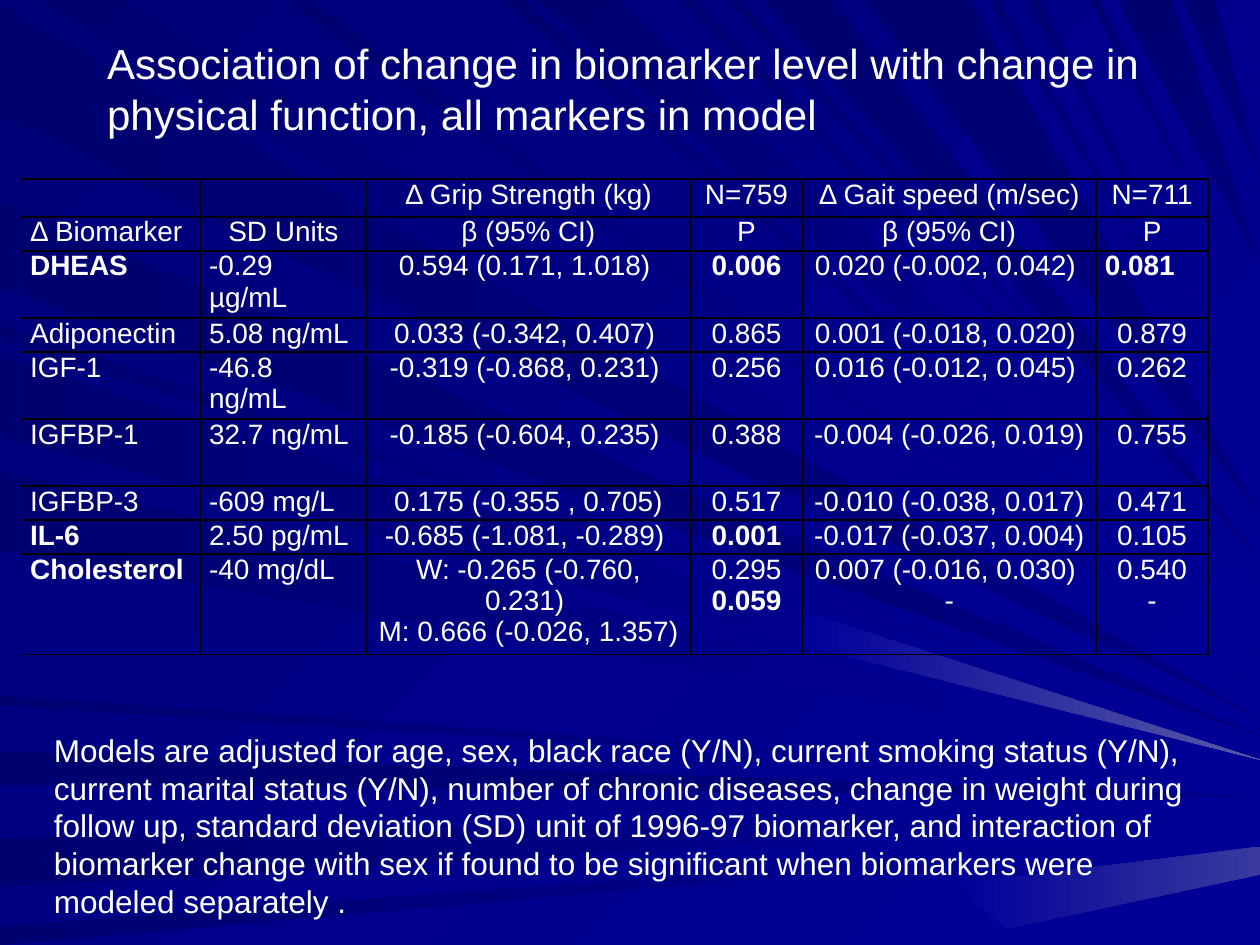
from lxml import etree
from pptx import Presentation
from pptx.dml.color import RGBColor
from pptx.enum import text
from pptx.oxml import ns
from pptx.util import Inches, Pt

WHITE = RGBColor(0xFF, 0xFF, 0xFF)
BLACK = RGBColor(0x00, 0x00, 0x00)
NIGHT = RGBColor(0x00, 0x00, 0x78)
SHADE = RGBColor(0x00, 0x00, 0x70)
BLUE = RGBColor(0x00, 0x00, 0x99)
NAVY = RGBColor(0x00, 0x00, 0x80)
HAZE = RGBColor(0x39, 0x39, 0x9E)
GLOW = RGBColor(0x5A, 0x5A, 0xA6)

# Rays run from a stretch of one edge to a tip on the right edge: from, to, tip height
LEFT_NAVY = [(0.02, 0.93, 5.7), (1.59, 2.28, 5.84), (5.96, 6.23, 6.32)]
LEFT_BLUE = [(2.58, 2.7, 5.89), (3.74, 4.37, 6.06), (2.83, 3.47, 6.03),
             (5.52, 5.6, 6.22), (6.65, 7.04, 6.47), (7.35, 7.5, 6.62)]
TOP_BLUE = [(0.26, 1.01, 5.63), (2.25, 2.47, 5.5), (3.98, 4.16, 5.18),
            (4.26, 4.92, 4.93), (5.4, 5.52, 4.63), (5.77, 5.88, 4.54),
            (7.85, 7.92, 3.57), (8.15, 8.24, 3.36), (8.65, 8.72, 2.54)]
TOP_NAVY = [(6.06, 6.61, 4.46), (6.86, 7.7, 4.1), (8.87, 9.3, 2.1), (9.39, 9.64, 1.4)]
# Lighter patches near the right edge
PATCHES = [(HAZE, [(10, 6.94), (10, 6.72), (7.56, 7.02), (8, 7.37)]),
           (GLOW, [(10, 6.03), (6.37, 4.85), (6.33, 5.11)])]

TITLE = "Association of change in biomarker level with change in physical function, all markers in model"
NOTE = ("Models are adjusted for age, sex, black race (Y/N), current smoking status (Y/N), "
        "current marital status (Y/N), number of chronic diseases, change in weight during "
        "follow up, standard deviation (SD) unit of 1996-97 biomarker, and interaction of "
        "biomarker change with sex if found to be significant when biomarkers were modeled separately .")

# A leading * marks a bold line
ROWS = [
    ["", "", "Δ Grip Strength (kg)", "N=759", "Δ Gait speed (m/sec)", "N=711"],
    ["Δ Biomarker", "SD Units", "β (95% CI)", "P", "β (95% CI)", "P"],
    ["*DHEAS", "-0.29 µg/mL", "0.594 (0.171, 1.018) ", "*0.006", "0.020 (-0.002, 0.042) ", "*0.081"],
    ["Adiponectin", "5.08 ng/mL", "0.033 (-0.342, 0.407) ", "0.865", "0.001 (-0.018, 0.020) ", "0.879"],
    ["IGF-1", "-46.8 ng/mL", "-0.319 (-0.868, 0.231) ", "0.256", "0.016 (-0.012, 0.045) ", "0.262"],
    ["IGFBP-1", "32.7 ng/mL", "-0.185 (-0.604, 0.235) ", "0.388", "-0.004 (-0.026, 0.019)", "0.755"],
    ["IGFBP-3", "-609 mg/L", "0.175 (-0.355 , 0.705)", "0.517", "-0.010 (-0.038, 0.017) ", "0.471"],
    ["*IL-6", "2.50 pg/mL", "-0.685 (-1.081, -0.289) ", "*0.001", "-0.017 (-0.037, 0.004) ", "0.105"],
    ["*Cholesterol", "-40 mg/dL", "W: -0.265 (-0.760, 0.231) \nM: 0.666 (-0.026, 1.357) ",
     "0.295\n*0.059", "0.007 (-0.016, 0.030) \n-", "0.540\n-"],
]
COL_WIDTHS = [1.42, 1.32, 2.57, 0.89, 2.33, 0.89]
ROW_HEIGHTS = [0.27, 0.27, 0.53, 0.27, 0.53, 0.53, 0.27, 0.27, 0.8]
LEFT_CELLS = {(2, 5)}  # set left although its column is centred


def set_all(obj, values):
    for name, value in values.items():
        setattr(obj, name, value)


def write(p, words, size, align, bold=False):
    p.alignment = align
    r = p.add_run()
    r.text = words
    set_all(r.font, {"name": "Arial", "size": Pt(size), "bold": bold})
    r.font.color.rgb = WHITE


def paint(fill, start, end, angle):
    fill.gradient()
    fill.gradient_angle = -angle % 360  # counter-clockwise
    for stop, color in zip(fill.gradient_stops, (start, end)):
        stop.color.rgb = color


def add_ray(group, corners, start, end, angle):
    points = [(Inches(x), Inches(y)) for x, y in corners]
    builder = group.shapes.build_freeform(*points[0])
    builder.add_line_segments(points[1:], close=True)
    sp = builder.convert_to_shape()
    paint(sp.fill, start, end, angle)
    sp.line.fill.background()
    sp.shadow.inherit = False


def add_background(s, width):
    paint(s.background.fill, NIGHT, BLUE, 45)
    group = s.shapes.add_group_shape()
    for rays, end in ((LEFT_NAVY, NAVY), (LEFT_BLUE, BLUE)):
        for first, last, tip in rays:
            add_ray(group, [(0, first), (0, last), (width, tip)], SHADE, end, 0)
    for rays, end, angle in ((TOP_BLUE, BLUE, 45), (TOP_NAVY, NAVY, 90)):
        for first, last, tip in rays:
            add_ray(group, [(first, 0), (last, 0), (width, tip)], SHADE, end, angle)
    for end, corners in PATCHES:
        add_ray(group, corners, BLUE, end, 0)
    # Send the rays behind the title
    s.shapes.element.insert(2, group.element)


def fill_text(sp, box, words, size):
    set_all(sp, dict(zip(("left", "top", "width", "height"), map(Inches, box))))
    tf = sp.text_frame
    set_all(tf, {"word_wrap": True, "vertical_anchor": text.MSO_ANCHOR.TOP,
                 "auto_size": text.MSO_AUTO_SIZE.SHAPE_TO_FIT_TEXT})
    write(tf.paragraphs[0], words, size, text.PP_ALIGN.LEFT)


def add_borders(cell):
    tc_pr = cell._tc.get_or_add_tcPr()
    for i, side in enumerate(("a:lnL", "a:lnR", "a:lnT", "a:lnB")):
        ln = etree.Element(ns.qn(side), w=str(Pt(1)))
        solid = etree.SubElement(ln, ns.qn("a:solidFill"))
        etree.SubElement(solid, ns.qn("a:srgbClr"), val=str(BLACK))
        tc_pr.insert(i, ln)


def add_results(s, box):
    table = s.shapes.add_table(len(ROWS), len(COL_WIDTHS), *map(Inches, box)).table
    set_all(table, {"first_row": False, "horz_banding": False})
    for col, width in zip(table.columns, COL_WIDTHS):
        col.width = Inches(width)
    for row, height in zip(table.rows, ROW_HEIGHTS):
        row.height = Inches(height)
    for i, values in enumerate(ROWS):
        for j, value in enumerate(values):
            cell = table.cell(i, j)
            set_all(cell, {"margin_left": Inches(0.07), "margin_right": Inches(0.07),
                           "margin_top": 0, "margin_bottom": 0})
            cell.fill.background()
            add_borders(cell)
            is_left = j == 0 or (j == 1 and i > 1) or (i, j) in LEFT_CELLS
            align = text.PP_ALIGN.LEFT if is_left else text.PP_ALIGN.CENTER
            tf = cell.text_frame
            for k, line in enumerate(value.split("\n")):
                p = tf.add_paragraph() if k else tf.paragraphs[0]
                write(p, line.lstrip("*"), 16, align, line.startswith("*"))


def main():
    prs = Presentation()
    set_all(prs, {"slide_width": Inches(10), "slide_height": Inches(7.5)})
    s = prs.slides.add_slide(prs.slide_layouts[5])
    add_background(s, 10)
    fill_text(s.shapes.title, (0.75, 0.25, 8.42, 0.91), TITLE, 24)
    add_results(s, (0.17, 1.42, sum(COL_WIDTHS), sum(ROW_HEIGHTS)))
    note_box = (0.33, 5.75, 9.17, 1.31)
    fill_text(s.shapes.add_textbox(0, 0, 0, 0), note_box, NOTE, 18)
    prs.save("out.pptx")


if __name__ == "__main__":
    main()
